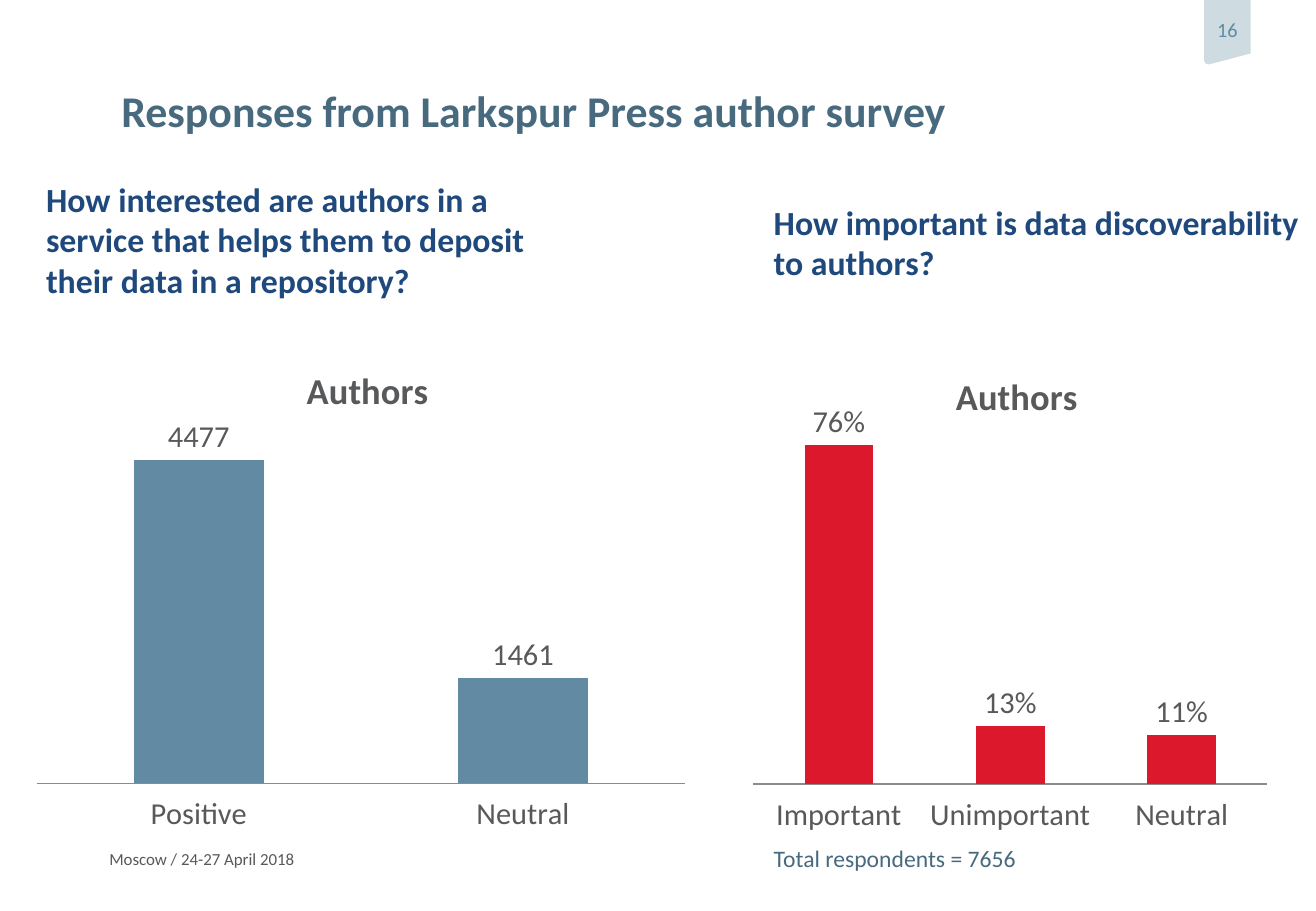
from lxml.etree import SubElement
from pptx import Presentation
from pptx.chart.data import CategoryChartData as ChartData
from pptx.dml.color import RGBColor
from pptx.enum.chart import XL_CHART_TYPE as ChartType
from pptx.enum.chart import XL_LABEL_POSITION as LabelPos
from pptx.enum.chart import XL_TICK_LABEL_POSITION as TickLabelPos
from pptx.enum.chart import XL_TICK_MARK as TickMark
from pptx.enum.text import MSO_ANCHOR as Anchor
from pptx.enum.text import PP_ALIGN as Align
from pptx.oxml.ns import qn
from pptx.util import Pt

COLORS = {
    "steel": "628BA3", "slate": "486A7E", "navy": "1F497D", "grey": "58595B",
    "red": "DC182D", "pale": "CEDBE0", "axis": "8B8B8B",
}


def color(name):
    return RGBColor.from_string(COLORS[name])


def style_font(font, size, tint, bold=False):
    font.name = "Calibri"
    font.size = Pt(size)
    font.bold = bold
    font.color.rgb = color(tint)


def write(frame, text, size=20, tint="navy", bold=False, align=Align.LEFT,
          anchor=Anchor.TOP, insets=(7.2, 7.2, 7.2, 7.2), spacing=None):
    frame.word_wrap = True
    frame.vertical_anchor = anchor
    (frame.margin_left, frame.margin_top,
     frame.margin_right, frame.margin_bottom) = map(Pt, insets)
    paragraph = frame.paragraphs[0]
    paragraph.alignment = align
    paragraph.line_spacing = spacing
    run = paragraph.add_run()
    run.text = text
    style_font(run.font, size, tint, bold)


def place(parent, index, **position):
    """Insert a manual layout, given as fractions of the chart, into parent."""
    layout = SubElement(parent, qn("c:layout"))
    manual = SubElement(layout, qn("c:manualLayout"))
    if "w" in position:
        SubElement(manual, qn("c:layoutTarget")).set("val", "inner")
    for mode in ("xMode", "yMode"):
        SubElement(manual, qn(f"c:{mode}")).set("val", "edge")
    for key, value in position.items():
        SubElement(manual, qn(f"c:{key}")).set("val", str(value))
    for old in parent.findall(qn("c:layout"))[:-1]:
        parent.remove(old)
    parent.insert(index, layout)


class SurveySlide:
    def __init__(self, deck):
        self.slide = deck.slides.add_slide(deck.slide_layouts[6])
        self.shapes = self.slide.shapes

    def text(self, box, text, **style):
        frame = self.shapes.add_textbox(*map(Pt, box)).text_frame
        write(frame, text, **style)

    def outline(self, points, fill, text, **style):
        start, *rest = [(Pt(x), Pt(y)) for x, y in points]
        builder = self.shapes.build_freeform(*start)
        builder.add_line_segments(rest, close=True)
        tab = builder.convert_to_shape()
        tab.shadow.inherit = False
        tab.fill.solid()
        tab.fill.fore_color.rgb = color(fill)
        tab.line.fill.background()
        write(tab.text_frame, text, **style)

    def columns(self, box, series_name, answers, tint, top, number_format, title_x):
        data = ChartData(number_format=number_format)
        data.categories = list(answers)
        data.add_series(series_name, list(answers.values()))
        chart = self.shapes.add_chart(
            ChartType.COLUMN_CLUSTERED, *map(Pt, box), data).chart
        chart.has_legend = False
        style_font(chart.font, 18, "grey")

        # Title and plot area
        title = chart.chart_title
        heading = title.text_frame.paragraphs[0].add_run()
        heading.text = "Authors"
        style_font(heading.font, 21.6, "grey", bold=True)
        title.include_in_layout = False
        place(title._element, 1, x=title_x, y=0.06)
        plot = chart.plots[0]
        place(plot._element.getparent(), 0, x=0.02, y=0.186, w=0.96, h=0.711)

        # Axes
        answer_axis, count_axis = chart.category_axis, chart.value_axis
        answer_axis.major_tick_mark = TickMark.NONE
        answer_axis.tick_label_position = TickLabelPos.LOW
        answer_axis.format.line.color.rgb = color("axis")
        answer_axis.format.line.width = Pt(0.75)
        count_axis.minimum_scale, count_axis.maximum_scale = 0, top
        count_axis.has_major_gridlines = False
        count_axis.visible = False

        # Columns and their labels
        plot.gap_width, plot.overlap = 150, -25
        plot.vary_by_categories = False
        fill = plot.series[0].format.fill
        fill.solid()
        fill.fore_color.rgb = color(tint)
        plot.has_data_labels = True
        labels = plot.data_labels
        labels.show_value = True
        labels.position = LabelPos.OUTSIDE_END
        labels.number_format = number_format
        labels.number_format_is_linked = False
        style_font(labels.font, 18, "grey")


def main():
    deck = Presentation()
    deck.slide_width, deck.slide_height = Pt(779.76), Pt(540)
    survey = SurveySlide(deck)

    # Page number tab and footer
    tab_outline = [(713.5, 0), (741, 0), (741, 31.7), (716.4, 38.2),
                   (715, 38), (713.9, 37.2), (713.5, 36)]
    survey.outline(tab_outline, "pale", "16", size=12, tint="steel",
                   align=Align.CENTER, anchor=Anchor.MIDDLE, insets=(0, 0, 0, 3))
    survey.text((64.8, 503.3, 165, 12.2), "Moscow / 24-27 April 2018",
                size=10, tint="grey", insets=(0, 0, 0, 0))

    # Interest in a deposit service
    survey.text((20.2, 98.6, 338.4, 60.5),
                "How interested are authors in a service that helps them "
                "to deposit their data in a repository?", bold=True)
    survey.columns((13.7, 194.4, 400.3, 301), "Series 1",
                   {"Positive": 4477, "Neutral": 1461},
                   "steel", 5000, "0", title_x=0.41)

    # Importance of discoverability
    survey.text((451.4, 112.3, 338.4, 60.5),
                "How important is data discoverability to authors?", bold=True)
    survey.columns((439.9, 198, 317.5, 297.4), "Authors",
                   {"Important": 0.76, "Unimportant": 0.13, "Neutral": 0.11},
                   "red", 0.8, "0%", title_x=0.386)
    survey.text((451.4, 487.4, 249.8, 39.6), "Total respondents = 7656",
                size=14, tint="slate", anchor=Anchor.MIDDLE, spacing=1.15)

    # Slide title
    survey.text((64.8, 42.5, 648.7, 29.5),
                "Responses from Larkspur Press author survey",
                size=26, tint="slate", bold=True)

    deck.save("out.pptx")


if __name__ == "__main__":
    main()
